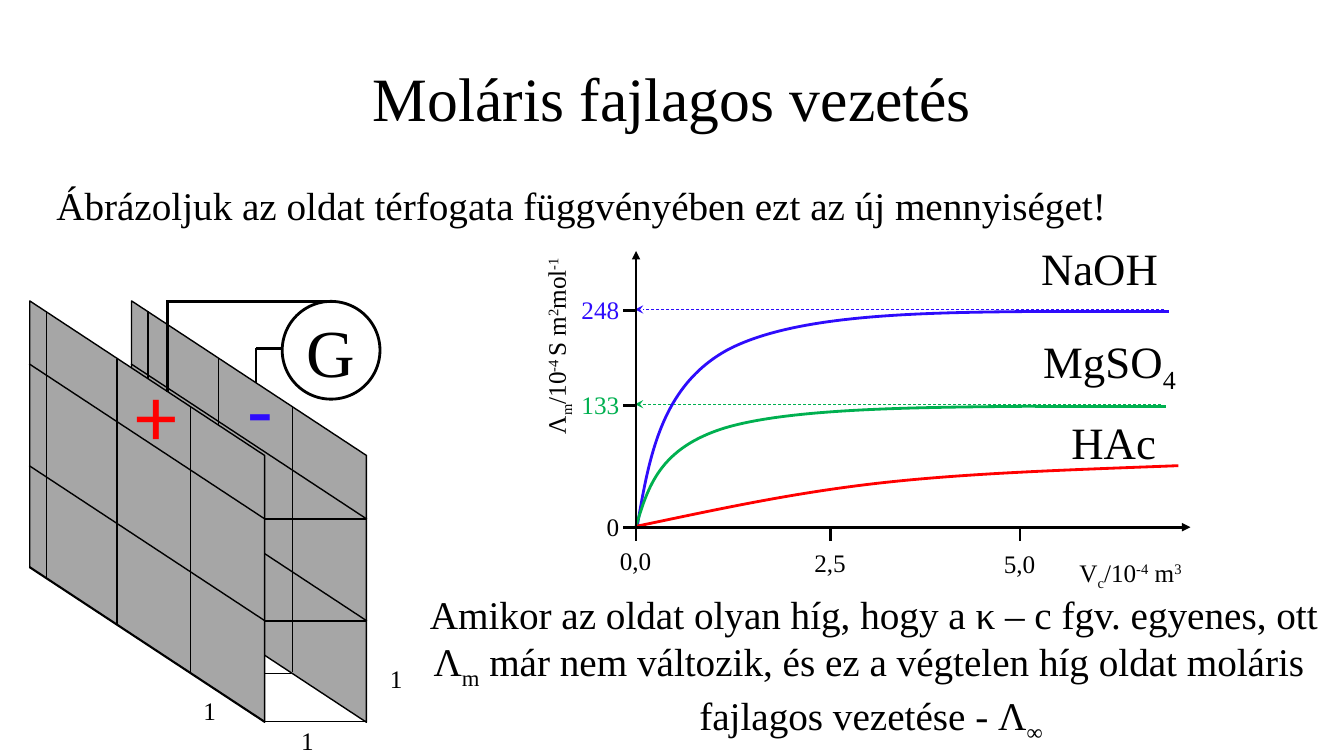
"""Build a slide on molar conductivity with a cell sketch and a curve plot."""
from lxml import etree
from pptx import Presentation
from pptx.dml.color import RGBColor
from pptx.enum.dml import MSO_LINE
from pptx.enum.shapes import MSO_CONNECTOR, MSO_SHAPE
from pptx.enum.text import MSO_ANCHOR, MSO_AUTO_SIZE, PP_ALIGN
from pptx.oxml.ns import qn
from pptx.util import Inches, Pt

BLACK = RGBColor(0, 0, 0)
WHITE = RGBColor(255, 255, 255)
GRAY = RGBColor(0xA6, 0xA6, 0xA6)
BLUE = RGBColor(0x2E, 0x0C, 0xFC)
GREEN = RGBColor(0, 0xB0, 0x50)
RED = RGBColor(255, 0, 0)
SERIF = "Times New Roman"
SANS = "Calibri"
LEFT, CENTER = PP_ALIGN.LEFT, PP_ALIGN.CENTER
TOP, MIDDLE = MSO_ANCHOR.TOP, MSO_ANCHOR.MIDDLE
GROW, FIXED = MSO_AUTO_SIZE.SHAPE_TO_FIT_TEXT, MSO_AUTO_SIZE.NONE
STRAIGHT = MSO_CONNECTOR.STRAIGHT
DASH = MSO_LINE.DASH
OVAL, SLANT = MSO_SHAPE.OVAL, MSO_SHAPE.PARALLELOGRAM
SUB, SUPER = "-25000", "30000"


def write(frame, paras, size=18, color=BLACK, face=SERIF, align=LEFT,
          anchor=TOP, wrap=False, fit=GROW, pitch=None):
    """Fill a text frame; each paragraph lists strings or (string, baseline)."""
    frame.word_wrap = wrap
    frame.auto_size = fit
    frame.vertical_anchor = anchor
    for index, parts in enumerate(paras):
        para = frame.add_paragraph() if index else frame.paragraphs[0]
        para.alignment = align
        para.line_spacing = pitch
        for part in parts:
            if part == "\n":
                para.add_line_break()
                continue
            words, base = part if isinstance(part, tuple) else (part, None)
            run = para.add_run()
            run.text = words
            run.font.size = Pt(size)
            run.font.name = face
            run.font.color.rgb = color
            if base:
                run.font._element.set("baseline", base)


def label(slide, box, *paras, turn=0, **style):
    """Add a text box at left, top, width, height."""
    shape = slide.shapes.add_textbox(*map(Inches, box))
    shape.rotation = turn
    write(shape.text_frame, paras, **style)


def line(slide, start, end, width=1, color=BLACK, dash=None, tip=None):
    """Draw a straight line, dashed or with an arrowhead if asked."""
    link = slide.shapes.add_connector(STRAIGHT, *map(Inches, start + end))
    link.line.width = Pt(width)
    link.line.color.rgb = color
    if dash:
        link.line.dash_style = dash
    if tip:
        etree.SubElement(link.line._get_or_add_ln(), qn("a:tailEnd"), type=tip)
    etree.SubElement(link._element.spPr, qn("a:effectLst"))


def solid(slide, kind, box, fill, width):
    """Add a filled preset shape with a black outline."""
    shape = slide.shapes.add_shape(kind, *map(Inches, box))
    shape.shadow.inherit = False
    shape.fill.solid()
    shape.fill.fore_color.rgb = fill
    shape.line.color.rgb = BLACK
    shape.line.width = Pt(width)
    return shape


def curve(slide, knots, color):
    """Draw a chain of cubic arcs, three knots to each arc after the first."""
    points = [tuple(map(Inches, knot)) for knot in knots]
    pen = slide.shapes.build_freeform(*points[0])
    pen.add_line_segments(points[1:], close=False)
    shape = pen.convert_to_shape()
    legs = list(shape._element.iter(qn("a:lnTo")))
    for first in range(0, len(legs), 3):
        arc = etree.Element(qn("a:cubicBezTo"))
        legs[first].addprevious(arc)
        for leg in legs[first:first + 3]:
            arc.append(leg[0])
            leg.getparent().remove(leg)
    shape.shadow.inherit = False
    shape.fill.background()
    shape.line.color.rgb = color
    shape.line.width = Pt(2)


def plate(slide, left, rows, drops):
    """Draw a slanted electrode with its grid."""
    shape = solid(slide, SLANT, (left - 0.92, 3.91, 4.18, 2.33), GRAY, 1)
    shape.rotation = 90
    shape.adjustments[0] = 0.658
    for top in rows:
        line(slide, (left, top), (left + 2.34, top + 1.54))
    for shift, top, drop in zip((0.17, 0.87, 1.6), (3.09, 3.56, 4.04), drops):
        line(slide, (left + shift, top), (left + shift, top + drop))


def cell(slide):
    """Draw the two plates, the meter and its wires."""
    plate(slide, 1.3, (3.61, 4.62), (0.67, 0.67, 2.63))
    meter = solid(slide, OVAL, (2.8, 2.99, 0.97, 0.97), WHITE, 2)
    write(meter.text_frame, [["G"]], size=48, align=CENTER, anchor=MIDDLE,
          fit=FIXED)
    label(slide, (2.36, 3.5, 0.46, 1.11), ["-"], size=60, color=BLUE, face=SANS)
    plate(slide, 0.29, (3.61, 4.62, 5.62), (2.64, 2.64, 2.63))
    for top, right in ((5.15, 3.64), (6.16, 3.63), (6.68, 2.89), (7.16, 3.63)):
        line(slide, (2.62, top), (right, top))
    for start, end in (((1.66, 2.98), (1.66, 3.89)), ((1.66, 2.99), (3.3, 2.99)),
                       ((2.54, 3.45), (2.54, 3.8)), ((2.8, 3.46), (2.54, 3.46))):
        line(slide, start, end, 2)
    for left, top in ((3.77, 6.53), (2.89, 7.15), (1.92, 6.85)):
        label(slide, (left, top, 0.33, 0.4), ["1"])
    label(slide, (1.25, 3.55, 0.62, 1.11), ["+"], size=60, color=RED, face=SANS)


def plot(slide):
    """Draw the axes, ticks, limits and curves."""
    for top, right, color in ((3.07, 11.55, BLUE), (4.01, 11.52, GREEN)):
        line(slide, (right, top), (6.3, top), 0.5, color, DASH, "stealth")
    curve(slide, [(6.32, 5.23), (6.44, 4.53), (6.56, 3.83), (7.22, 3.47),
                  (7.89, 3.12), (9.09, 3.1), (10.3, 3.09)], BLUE)
    curve(slide, [(6.31, 5.22), (6.43, 4.83), (6.54, 4.44), (7.21, 4.24),
                  (7.87, 4.05), (9.08, 4.04), (10.29, 4.03)], GREEN)
    curve(slide, [(6.32, 5.22), (7.09, 5.06), (7.85, 4.89), (8.75, 4.79),
                  (9.65, 4.69), (10.67, 4.66), (11.69, 4.62)], RED)
    line(slide, (10.3, 3.09), (11.6, 3.09), 2, BLUE)
    line(slide, (10.27, 4.03), (11.57, 4.03), 2, GREEN)
    label(slide, (10.23, 2.34, 1.37, 0.64), ["NaOH"], size=32)
    label(slide, (10.25, 3.26, 1.55, 0.64), ["MgSO", ("4", SUB)], size=32)
    label(slide, (10.53, 4.07, 1.05, 0.64), ["HAc"], size=32)
    line(slide, (6.31, 5.25), (6.31, 2.49), 2, tip="triangle")
    line(slide, (6.3, 5.23), (11.81, 5.23), 2, tip="triangle")
    for mark, left, top in (("0,0", 6.31, 5.36), ("2,5", 8.24, 5.38),
                            ("5,0", 10.12, 5.39)):
        line(slide, (left, 5.24), (left, 5.37), 2)
        label(slide, (left - 0.26, top, 0.52, 0.4), [mark])
    for mark, top, width, color in (("0", 5.23, 0.33, BLACK),
                                    ("133", 4.02, 0.58, GREEN),
                                    ("248", 3.08, 0.58, BLUE)):
        line(slide, (6.31, top), (6.18, top), 2)
        label(slide, (6.25 - width, top - 0.21, width, 0.4), [mark], color=color)
    label(slide, (4.46, 3.15, 2.11, 0.4),
          ["Λ", ("m", SUB), "/10", ("-4 ", SUPER), "S m", ("2", SUPER),
           "mol", ("-1", SUPER)], turn=270)
    label(slide, (10.61, 5.48, 1.27, 0.4),
          ["V", ("c", SUB), "/10", ("-4", SUPER), " m", ("3", SUPER)])


def main():
    """Build and save the slide."""
    deck = Presentation()
    deck.slide_width, deck.slide_height = Inches(40 / 3), Inches(7.5)
    slide = deck.slides.add_slide(deck.slide_layouts[6])
    label(slide, (0.92, 0.28, 11.5, 1.45), ["Moláris fajlagos vezetés"], size=44,
          align=CENTER, anchor=MIDDLE, wrap=True, fit=FIXED, pitch=0.9)
    label(slide, (0.46, 1.75, 10.72, 0.57),
          ["Ábrázoljuk az oldat térfogata függvényében ezt az új mennyiséget!"],
          size=28)
    cell(slide)
    plot(slide)
    label(slide, (4.12, 5.81, 9.1, 1.51),
          ["Amikor az oldat olyan híg, hogy a κ – c fgv. egyenes, ott", "\n", "Λ",
           ("m", SUB), " már nem változik, és ez a végtelen híg oldat moláris "],
          ["fajlagos vezetése - Λ", ("∞ ", SUB)],
          size=28, align=CENTER, wrap=True)
    deck.save("out.pptx")


if __name__ == "__main__":
    main()
